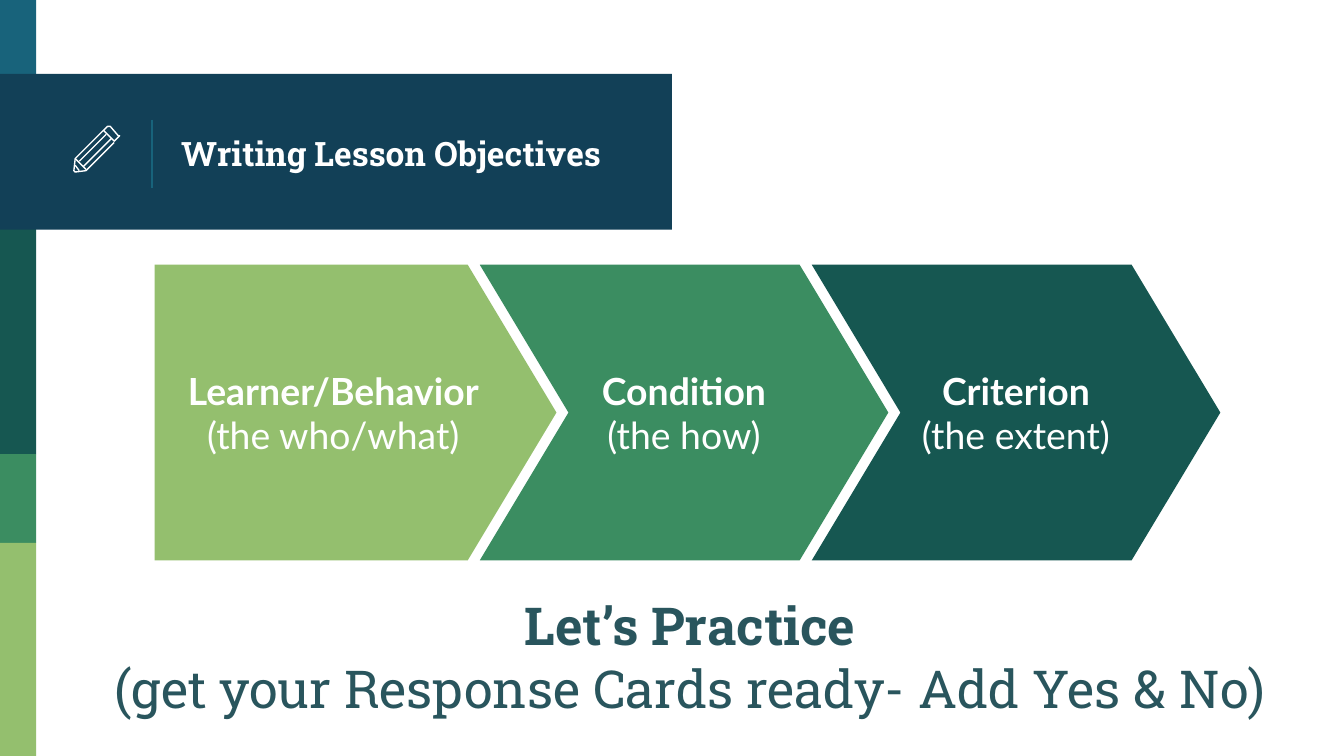
from lxml import etree
from pptx import Presentation
from pptx import util as u
from pptx.dml.color import RGBColor
from pptx.enum import shapes, text
from pptx.oxml.ns import qn

PX = 9144  # EMU in one px, 100 px to the inch
WHITE = RGBColor(0xFF, 0xFF, 0xFF)
NAVY = RGBColor(0x12, 0x40, 0x57)
BLUE = RGBColor(0x18, 0x63, 0x7B)
TEAL = RGBColor(0x16, 0x57, 0x51)
GREEN = RGBColor(0x3B, 0x8D, 0x61)
LIME = RGBColor(0x94, 0xBF, 0x6E)
SLATE = RGBColor(0x29, 0x55, 0x5D)
SHAPE = shapes.MSO_SHAPE
ALIGN = text.PP_ALIGN
ANCHOR = text.MSO_ANCHOR


def emu(*lengths):
    return [u.Emu(n * PX) for n in lengths]


def add_block(s, kind, box, color):
    sp = s.shapes.add_shape(kind, *emu(*box))
    sp.shadow.inherit = False
    sp.fill.solid()
    sp.fill.fore_color.rgb = color
    sp.line.fill.background()
    return sp


def write(sp, lines, font, size, color, align=ALIGN.CENTER,
          anchor=ANCHOR.MIDDLE, one_paragraph=False):
    """Fill a shape with lines, the first in bold, split by paragraphs or breaks."""
    tf = sp.text_frame
    tf.word_wrap = True
    tf.vertical_anchor = anchor
    tf.margin_left = tf.margin_right = tf.margin_top = tf.margin_bottom = u.Inches(0.1)
    p = tf.paragraphs[0]
    for i, line in enumerate(lines):
        if i and one_paragraph:
            p.add_line_break()
        elif i:
            p = tf.add_paragraph()
        p.alignment = align
        r = p.add_run()
        r.text = line
        r.font.name = font
        r.font.size = u.Pt(size)
        r.font.bold = i == 0
        r.font.color.rgb = color


def add_sidebar(s, x, y, w):
    for top, height, color in [(0, 58, BLUE), (170, 168, TEAL),
                               (338, 66, GREEN), (404, 159, LIME)]:
        add_block(s, SHAPE.RECTANGLE, (x, y + top, w, height), color)


def add_pencil(s, x, y):
    outlines = [
        ([(33, 7), (27, 0), (25, 0), (22, 3), (30, 11), (33, 8), (34, 7)], True),
        ([(28, 9), (7, 30)], False),
        ([(22, 3), (1, 24), (0, 33), (1, 34), (9, 33), (30, 12)], False),
        ([(4, 26), (24, 6)], False),
        ([(4, 33), (1, 29)], False),
        ([(1, 24), (9, 32)], False),
    ]
    group = s.shapes.add_group_shape()
    for points, closed in outlines:
        builder = group.shapes.build_freeform(*points[0], scale=PX)
        builder.add_line_segments(points[1:], close=closed)
        sp = builder.convert_to_shape(*emu(x, y))
        sp.shadow.inherit = False
        sp.fill.background()
        sp.line.color.rgb = WHITE
        sp.line.width = u.Pt(0.75)


def add_banner(s, x, y, w, h):
    add_block(s, SHAPE.RECTANGLE, (x, y, w, h), NAVY)
    rule = s.shapes.add_connector(shapes.MSO_CONNECTOR.STRAIGHT,
                                  *emu(x + 113, y + 34, x + 113, y + 85))
    rule.line.color.rgb = BLUE
    rule.line.width = u.Pt(0.75)
    etree.SubElement(rule._element.spPr, qn("a:effectLst"))
    title = s.shapes.add_textbox(*emu(x + 125, y + 3, 351, 112))
    write(title, ["Writing Lesson Objectives"], "Roboto Slab", 18, WHITE, ALIGN.LEFT)
    add_pencil(s, x + 55, y + 39)


def add_process(s, x, y, h):
    steps = [
        (SHAPE.PENTAGON, 0, 299, LIME, ["Learner/Behavior", "(the who/what)"]),
        (SHAPE.CHEVRON, 242, 304, GREEN, ["Condition", "(the how)"]),
        (SHAPE.CHEVRON, 489, 304, TEAL, ["Criterion", "(the extent)"]),
    ]
    for kind, left, width, color, lines in steps:
        sp = add_block(s, kind, (x + left, y, width, h), color)
        sp.adjustments[0] = 0.3
        write(sp, lines, "Lato", 20, WHITE, one_paragraph=kind == SHAPE.CHEVRON)


def add_prompt(s, *box):
    sp = s.shapes.add_textbox(*emu(*box))
    write(sp, ["Let’s Practice", "(get your Response Cards ready- Add Yes & No)"],
          "Roboto Slab", 28, SLATE, anchor=ANCHOR.BOTTOM)


def main():
    prs = Presentation()
    prs.slide_width = u.Emu(1000 * PX)
    prs.slide_height = u.Emu(prs.slide_width * 9 // 16)
    s = prs.slides.add_slide(prs.slide_layouts[6])
    add_sidebar(s, 0, 0, 27)
    add_banner(s, 0, 55, 500, 116)
    add_process(s, 115, 197, 220)
    add_prompt(s, 59, 418, 909, 127)
    prs.save("out.pptx")


if __name__ == "__main__":
    main()
